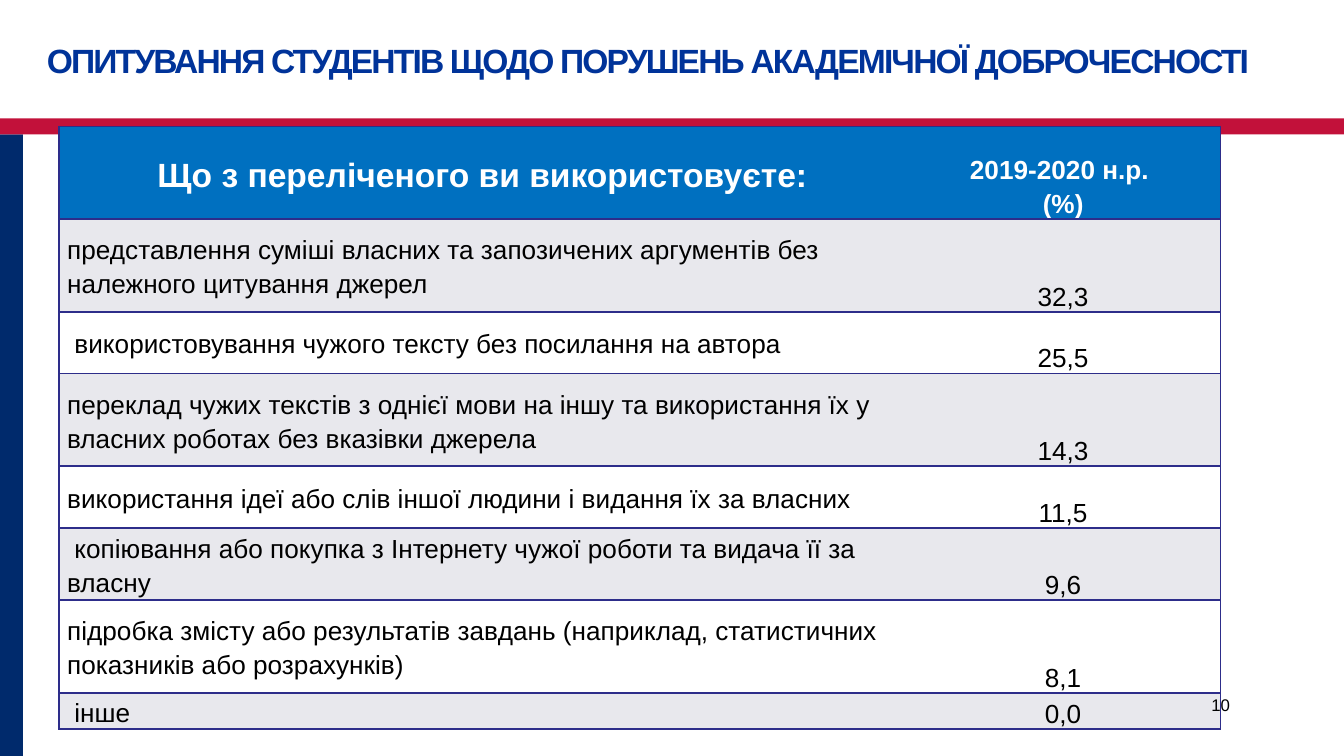
import pptx
import pptx.util
import pptx.dml.color
import pptx.enum.shapes
import pptx.enum.text
import pptx.oxml
import pptx.oxml.ns

Inches = pptx.util.Inches
Pt = pptx.util.Pt
RGBColor = pptx.dml.color.RGBColor
ALIGN = pptx.enum.text.PP_ALIGN
ANCHOR = pptx.enum.text.MSO_ANCHOR

WIDE = 10
HIGH = WIDE * 9 / 16

NAVY = RGBColor(0x00, 0x2A, 0x6C)
RED = RGBColor(0xC2, 0x11, 0x3A)
BLUE = RGBColor(0x00, 0x33, 0x99)
HEAD = RGBColor(0x00, 0x70, 0xC0)
GRAY = RGBColor(0xE8, 0xE8, 0xED)
EDGE = RGBColor(0x2D, 0x2D, 0x8A)
WHITE = RGBColor(0xFF, 0xFF, 0xFF)
BLACK = RGBColor(0x00, 0x00, 0x00)

# Row height, answer, share
ROWS = [
    (0.69, "Що з переліченого ви використовуєте:", "2019-2020 н.р. \n(%)"),
    (0.69, "представлення суміші власних та запозичених аргументів без належного цитування джерел", "32,3"),
    (0.46, " використовування чужого тексту без посилання на автора", "25,5"),
    (0.69, "переклад чужих текстів з однієї мови на іншу та використання їх у власних роботах без вказівки джерела", "14,3"),
    (0.46, "використання ідеї або слів іншої людини і видання їх за власних", "11,5"),
    (0.46, " копіювання або покупка з Інтернету чужої роботи та видача її за власну", "9,6"),
    (0.69, "підробка змісту або результатів завдань (наприклад, статистичних показників або розрахунків)", "8,1"),
    (0.23, " інше", "0,0"),
]


def style(frame, size, color, bold=False, align=ALIGN.LEFT):
    for para in frame.paragraphs:
        para.alignment = align
        for run in para.runs:
            font = run.font
            font.name = "Arial"
            font.size = Pt(size)
            font.bold = bold
            font.color.rgb = color


def add_bar(slide, left, top, width, height, color):
    bar = slide.shapes.add_shape(
        pptx.enum.shapes.MSO_SHAPE.RECTANGLE,
        Inches(left), Inches(top), Inches(width), Inches(height))
    bar.shadow.inherit = False
    bar.fill.solid()
    bar.fill.fore_color.rgb = color
    bar.line.fill.background()


def add_text(slide, left, top, width, height, text):
    box = slide.shapes.add_textbox(
        Inches(left), Inches(top), Inches(width), Inches(height))
    box.text_frame.word_wrap = True
    box.text_frame.text = text
    return box.text_frame


def add_title(slide, left, top, width, height):
    frame = add_text(slide, left, top, width, height,
                     "ОПИТУВАННЯ СТУДЕНТІВ ЩОДО ПОРУШЕНЬ АКАДЕМІЧНОЇ ДОБРОЧЕСНОСТІ")
    frame.vertical_anchor = ANCHOR.MIDDLE
    style(frame, 18, BLUE, bold=True)
    for run in frame.paragraphs[0].runs:
        run.font._element.set("spc", "-100")


def add_page(slide, left, top, width, height):
    frame = add_text(slide, left, top, width, height, "10")
    style(frame, 9, BLACK, align=ALIGN.RIGHT)


def set_edges(cell, sides):
    """Draw the named sides of a cell and hide the others."""
    props = cell._tc.get_or_add_tcPr()
    for place, side in enumerate("LRTB"):
        paint = "<a:noFill/>"
        if side in sides:
            paint = f'<a:solidFill><a:srgbClr val="{EDGE}"/></a:solidFill>'
        line = pptx.oxml.parse_xml(
            f'<a:ln{side} {pptx.oxml.ns.nsdecls("a")} w="{Pt(1)}">{paint}</a:ln{side}>')
        props.insert(place, line)


def fill_cell(cell, text, fill, anchor):
    cell.margin_left = cell.margin_right = Inches(0.06)
    cell.margin_top = cell.margin_bottom = 0
    cell.vertical_anchor = anchor
    cell.fill.solid()
    cell.fill.fore_color.rgb = fill
    cell.text_frame.text = text
    for para in cell.text_frame.paragraphs:
        para.line_spacing = 1.15


def add_survey(slide, left, top, width, height):
    frame = slide.shapes.add_table(
        len(ROWS), 2, Inches(left), Inches(top), Inches(width), Inches(height))
    table = frame.table
    share = 2.34
    table.columns[0].width = Inches(width - share)
    table.columns[1].width = Inches(share)
    for i, (tall, answer, value) in enumerate(ROWS):
        table.rows[i].height = Inches(tall)
        first = i == 0
        fill = HEAD if first else GRAY if i % 2 else WHITE
        color = WHITE if first else BLACK
        label, number = table.cell(i, 0), table.cell(i, 1)
        fill_cell(label, answer, fill, ANCHOR.MIDDLE)
        fill_cell(number, value, fill, ANCHOR.BOTTOM)
        style(label.text_frame, 18 if first else 14, color, first,
              ALIGN.CENTER if first else ALIGN.LEFT)
        style(number.text_frame, 14, color, first, ALIGN.CENTER)
        set_edges(label, "LTB")
        set_edges(number, "RTB")
    # Row heights reset the frame, so its own height comes last
    frame.height = Inches(height)


def main():
    deck = pptx.Presentation()
    deck.slide_width, deck.slide_height = Inches(WIDE), Inches(HIGH)
    slide = deck.slides.add_slide(deck.slide_layouts[6])
    add_bar(slide, 0, 1, 0.17, HIGH - 1, NAVY)
    add_bar(slide, 0, 0.88, WIDE, 0.12, RED)
    add_title(slide, 0.25, 0.2, 9.31, 0.5)
    add_survey(slide, 0.44, 0.94, 8.64, 4.45)
    add_page(slide, 7.17, 5.12, 2.08, 0.38)
    deck.save("out.pptx")


if __name__ == "__main__":
    main()
